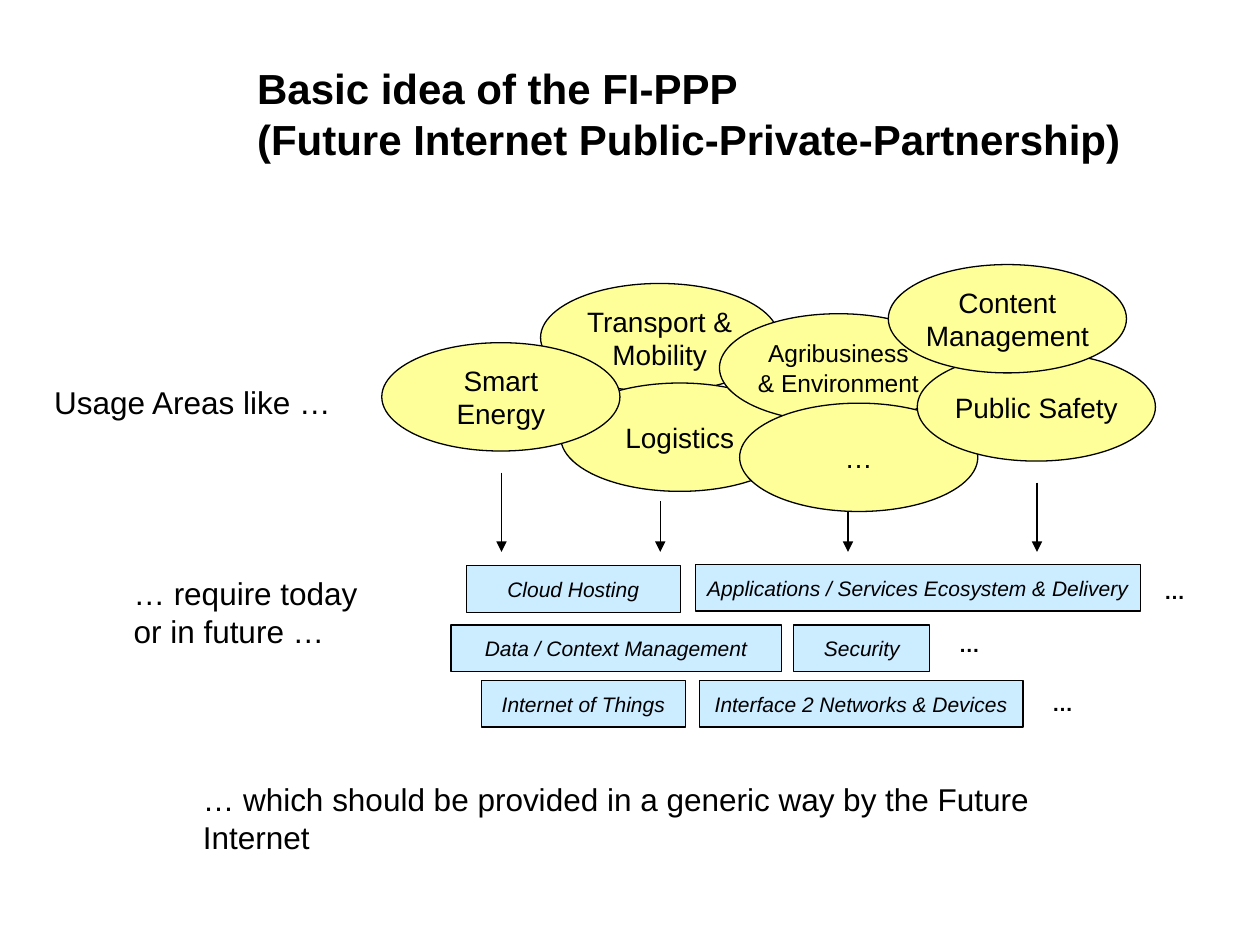
from dataclasses import dataclass

from lxml import etree
from pptx import Presentation
from pptx.dml.color import RGBColor
from pptx.enum.shapes import MSO_CONNECTOR as Connector, MSO_SHAPE as Shape
from pptx.enum.text import MSO_ANCHOR as Anchor, PP_ALIGN as Align
from pptx.oxml.ns import qn
from pptx.util import Inches, Pt


@dataclass(frozen=True)
class Theme:
    font: str = "Arial"
    ink: RGBColor = RGBColor(0x00, 0x00, 0x00)
    area_fill: RGBColor = RGBColor(0xFF, 0xFF, 0x99)
    service_fill: RGBColor = RGBColor(0xCC, 0xEC, 0xFF)
    line_width: float = 0.75
    title: int = 24
    body: int = 18
    area: int = 16
    area_small: int = 14
    service: int = 12


class SlideBuilder:
    def __init__(self, page, theme):
        self.page = page
        self.theme = theme

    def set_lines(self, frame, lines, size, align=Align.LEFT, bold=False,
                  italic=False, inset=0, wrap=True):
        frame.word_wrap = wrap
        frame.margin_left = frame.margin_right = Inches(inset)
        frame.margin_top = frame.margin_bottom = Inches(inset)
        for index, line in enumerate(lines):
            para = frame.paragraphs[0] if index == 0 else frame.add_paragraph()
            para.alignment = align
            span = para.add_run()
            span.text = line
            span.font.name = self.theme.font
            span.font.size = Pt(size)
            span.font.bold = bold
            span.font.italic = italic
            span.font.color.rgb = self.theme.ink

    def label(self, left, top, width, height, lines, size, **style):
        box = self.page.shapes.add_textbox(
            Inches(left), Inches(top), Inches(width), Inches(height))
        self.set_lines(box.text_frame, lines, size, **style)

    def outlined(self, kind, left, top, width, height, fill):
        shape = self.page.shapes.add_shape(
            kind, Inches(left), Inches(top), Inches(width), Inches(height))
        shape.shadow.inherit = False
        shape.fill.solid()
        shape.fill.fore_color.rgb = fill
        shape.line.color.rgb = self.theme.ink
        shape.line.width = Pt(self.theme.line_width)
        shape.text_frame.vertical_anchor = Anchor.MIDDLE
        return shape

    def usage_area(self, left, top, lines, size):
        oval = self.outlined(Shape.OVAL, left, top, 1.89, 0.86, self.theme.area_fill)
        self.set_lines(oval.text_frame, lines, size, align=Align.CENTER)

    def service(self, left, top, width, name):
        box = self.outlined(Shape.RECTANGLE, left, top, width, 0.37,
                            self.theme.service_fill)
        self.set_lines(box.text_frame, [name], self.theme.service, align=Align.CENTER,
                       italic=True, inset=0.08, wrap=False)

    def down_arrow(self, x, top, bottom):
        arrow = self.page.shapes.add_connector(
            Connector.STRAIGHT, Inches(x), Inches(top), Inches(x), Inches(bottom))
        arrow.line.color.rgb = self.theme.ink
        arrow.line.width = Pt(self.theme.line_width)
        properties = arrow._element.spPr
        etree.SubElement(properties.find(qn("a:ln")), qn("a:tailEnd"), type="triangle")
        etree.SubElement(properties, qn("a:effectLst"))


def main():
    theme = Theme()
    deck = Presentation()
    deck.slide_width, deck.slide_height = Inches(10), Inches(7.5)
    builder = SlideBuilder(deck.slides.add_slide(deck.slide_layouts[6]), theme)

    # Title
    builder.label(1.95, 0.41, 7.38, 1.13,
                  ["Basic idea of the FI-PPP",
                   "(Future Internet Public-Private-Partnership)"],
                  theme.title, bold=True, inset=0.09)

    # Usage areas, from back to front
    for left, top, lines, size in [
        (4.29, 2.25, ["Transport &", "Mobility"], theme.area),
        (4.45, 3.04, ["Logistics"], theme.area),
        (5.71, 2.49, ["Agribusiness", "& Environment"], theme.area_small),
        (5.87, 3.2, ["…"], theme.area),
        (3.03, 2.72, ["Smart Energy"], theme.area),
        (7.28, 2.8, ["Public Safety"], theme.area),
        (7.05, 2.1, ["Content Management"], theme.area),
    ]:
        builder.usage_area(left, top, lines, size)

    # Arrows from the usage areas to the services
    for x, top in [(3.98, 3.75), (5.24, 3.98), (6.73, 4.06), (8.23, 3.83)]:
        builder.down_arrow(x, top, 4.38)

    # Services
    for left, top, width, name in [
        (3.7, 4.49, 1.7, "Cloud Hosting"),
        (5.52, 4.48, 3.53, "Applications / Services Ecosystem & Delivery"),
        (3.58, 4.96, 2.62, "Data / Context Management"),
        (6.3, 4.96, 1.08, "Security"),
        (3.82, 5.4, 1.62, "Internet of Things"),
        (5.55, 5.4, 2.57, "Interface 2 Networks & Devices"),
    ]:
        builder.service(left, top, width, name)

    # Open ends of the service rows
    for left, top in [(9.24, 4.59), (7.61, 5.01), (8.35, 5.48)]:
        builder.label(left, top, 0.17, 0.2, ["…"], theme.service, bold=True, wrap=False)

    # Statements
    builder.label(0.43, 3.04, 2.21, 0.3, ["Usage Areas like …"], theme.body, wrap=False)
    builder.label(1.06, 4.56, 1.85, 0.6, ["… require today", "or in future …"],
                  theme.body, wrap=False)
    builder.label(1.61, 6.19, 7.3, 0.6,
                  ["… which should be provided in a generic way by the Future Internet"],
                  theme.body)

    deck.save("out.pptx")


if __name__ == "__main__":
    main()
